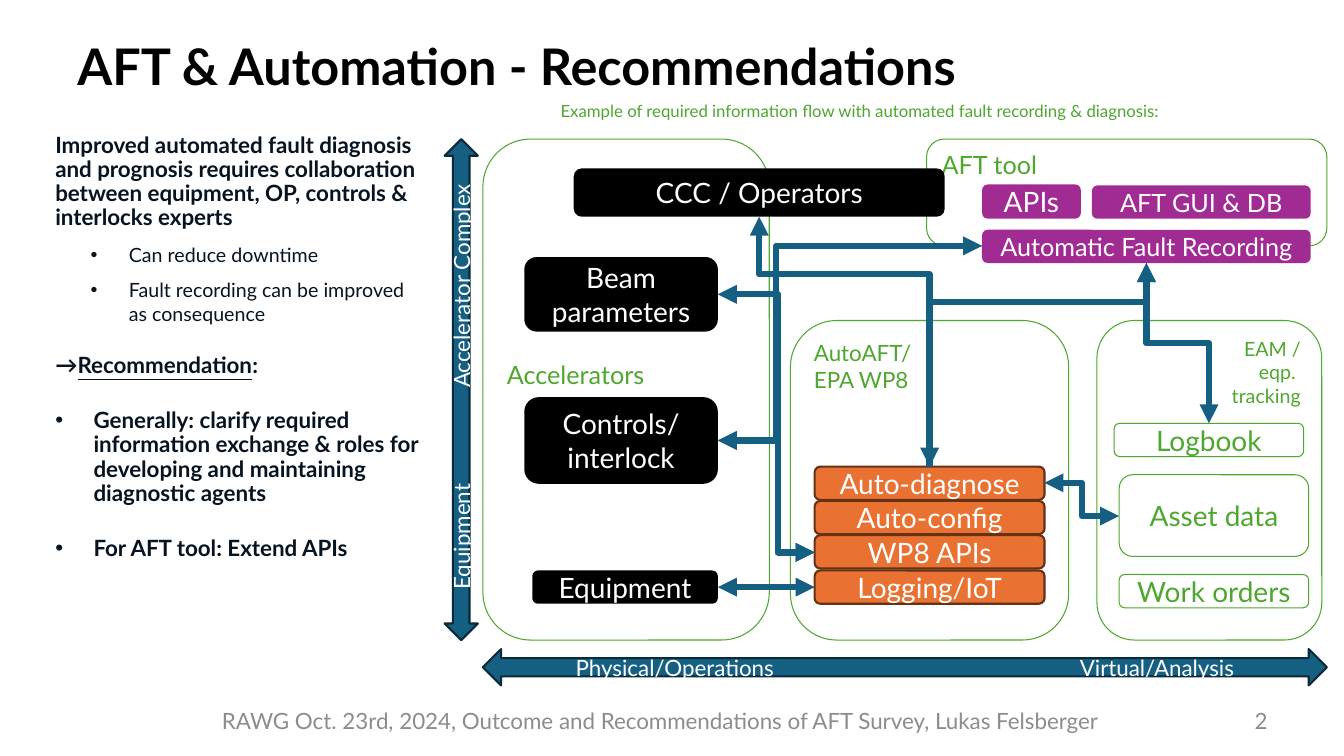
from lxml.etree import SubElement
from pptx import Presentation
from pptx.dml.color import RGBColor
from pptx.enum.shapes import MSO_CONNECTOR as Connector, MSO_SHAPE as Shape
from pptx.enum.text import MSO_ANCHOR as Anchor, PP_ALIGN as Align
from pptx.oxml.ns import qn
from pptx.util import Pt

WHITE = RGBColor(0xFF, 0xFF, 0xFF)
BLACK = RGBColor(0x00, 0x00, 0x00)
INK = RGBColor(0x07, 0x14, 0x20)
GREY = RGBColor(0x8C, 0x8C, 0x8C)
GREEN = RGBColor(0x4E, 0xA7, 0x2E)
ORANGE = RGBColor(0xE9, 0x71, 0x32)
BROWN = RGBColor(0x66, 0x32, 0x16)
PURPLE = RGBColor(0xA0, 0x2B, 0x93)
TEAL = RGBColor(0x15, 0x60, 0x82)
NAVY = RGBColor(0x09, 0x2A, 0x39)
SCALE = 9144


def px(length):
    return round(length * SCALE)


def assign(target, values):
    for name, value in values.items():
        setattr(target, name, value)


class Diagram:
    """Draws styled elements on one slide, with lengths in hundredths of an inch."""

    font_name = "Lato"

    def __init__(self, slide):
        self.slide = slide
        self.shapes = slide.shapes

    def run(self, paragraph, text, size, color, **values):
        paragraph.add_run().text = text
        font = paragraph.runs[-1].font
        assign(font, {"name": self.font_name, "size": Pt(size), **values})
        font.color.rgb = color

    def fill_text(self, frame, text, size, color, align=Align.LEFT, bold=False, **values):
        assign(frame, {"word_wrap": True, **values})
        frame.text = text
        for paragraph in frame.paragraphs:
            paragraph.alignment = align
            for run in paragraph.runs:
                assign(run.font, {"name": self.font_name, "size": Pt(size), "bold": bold})
                run.font.color.rgb = color

    def text(self, box, text, size, color, **values):
        textbox = self.shapes.add_textbox(*map(px, box))
        self.fill_text(textbox.text_frame, text, size, color, **values)

    def box(self, box, text, size, color, fill=None, line=None, width=0.75,
            kind=Shape.ROUNDED_RECTANGLE, **values):
        shape = self.shapes.add_shape(kind, *map(px, box))
        shape.shadow.inherit = False
        for target, paint in ((shape.fill, fill), (shape.line.fill, line)):
            if paint is None:
                target.background()
            else:
                target.solid()
                target.fore_color.rgb = paint
        if line is not None:
            shape.line.width = Pt(width)
        self.fill_text(shape.text_frame, text, size, color, **values)
        return shape

    def axis(self, box, first, second, indent, tab, rotation=0):
        shape = self.box(box, f"{first}\t{second}", 16, WHITE, TEAL, NAVY, 1.5,
                         Shape.LEFT_RIGHT_ARROW, vertical_anchor=Anchor.MIDDLE,
                         margin_left=px(indent))
        shape.rotation = rotation
        properties = shape.text_frame.paragraphs[0]._p.get_or_add_pPr()
        tabs = SubElement(properties, qn("a:tabLst"))
        SubElement(tabs, qn("a:tab"), pos=str(px(tab)), algn="l")

    def arrow(self, kind, start, end, ends=("headEnd", "tailEnd")):
        connector = self.shapes.add_connector(kind, *map(px, start + end))
        connector.line.width = Pt(4.5)
        connector.line.color.rgb = TEAL
        properties = connector._element.spPr
        for name in ends:
            SubElement(properties.find(qn("a:ln")), qn(f"a:{name}"), type="triangle")
        SubElement(properties, qn("a:effectLst"))
        return connector

    def elbow(self, start, end, bend=0.5, vertical=False, **values):
        connector = self.arrow(Connector.ELBOW, start, end, **values)
        properties = connector._element.spPr
        guides = properties.find(qn("a:prstGeom")).get_or_add_avLst()
        SubElement(guides, qn("a:gd"), name="adj1", fmla=f"val {round(bend * 100000)}")
        if vertical:
            across, down = end[0] - start[0], end[1] - start[1]
            width, height = abs(down), abs(across)
            assign(connector, {"left": px((start[0] + end[0] - width) / 2),
                               "top": px((start[1] + end[1] - height) / 2),
                               "width": px(width), "height": px(height)})
            frame = properties.find(qn("a:xfrm"))
            for name, value in (("rot", 16200000), ("flipH", int(down > 0)),
                                ("flipV", int(across < 0))):
                frame.set(name, str(value))

    def link(self, first, second):
        connector = self.arrow(Connector.STRAIGHT, (712, 583), (808, 583))
        connector.begin_connect(first, 3)
        connector.end_connect(second, 1)

    def paragraph(self, paragraph, runs, size, bold, indent, hanging, bullet, **spacing):
        assign(paragraph, spacing)
        properties = paragraph._p.get_or_add_pPr()
        properties.set("marL", str(px(indent)))
        properties.set("indent", str(-px(hanging)))
        if bullet:
            SubElement(properties, qn("a:buFont"), typeface="Arial")
            SubElement(properties, qn("a:buChar"), char="•")
        for text, underline in runs:
            self.run(paragraph, text, size, INK, bold=bold, underline=underline)

    def body(self, box, items):
        frame = self.shapes.add_textbox(*map(px, box)).text_frame
        frame.word_wrap = True
        main = dict(size=16, bold=True, indent=0, hanging=0, bullet=False,
                    line_spacing=0.9, space_before=Pt(18), space_after=Pt(4))
        point = {**main, "indent": 38, "hanging": 38, "bullet": True}
        detail = {**point, "size": 14, "bold": False, "indent": 73, "level": 1,
                  "line_spacing": 1.0, "space_before": Pt(5), "space_after": Pt(3)}
        styles = {"main": main, "point": point, "detail": detail}
        for index, (style, *runs) in enumerate(items):
            paragraph = frame.add_paragraph() if index else frame.paragraphs[0]
            self.paragraph(paragraph, runs, **styles[style])


def main():
    presentation = Presentation()
    assign(presentation, {"slide_width": px(1333), "slide_height": px(750)})
    diagram = Diagram(presentation.slides.add_slide(presentation.slide_layouts[6]))
    middle = {"vertical_anchor": Anchor.MIDDLE}
    centred = {"align": Align.CENTER, **middle}

    diagram.text((132, 695, 1046, 40), "RAWG Oct. 23rd, 2024, Outcome and Recommendations "
                 "of AFT Survey, Lukas Felsberger", 16, GREY, **centred)
    diagram.text((1194, 695, 73, 40), "2", 16, GREY, align=Align.RIGHT, **middle)

    top = {"vertical_anchor": Anchor.TOP}
    for box, text, size, values in (
        ((919, 138, 397, 106), "AFT tool", 18, top),
        ((479, 138, 284, 497), "Accelerators", 18, {"margin_bottom": px(35), **middle}),
        ((1088, 318, 223, 317), "EAM /\veqp. \vtracking", 14, {"align": Align.RIGHT, **top}),
        ((784, 318, 276, 317), "AutoAFT/\vEPA WP8", 16, top),
    ):
        diagram.box(box, text, size, GREEN, line=GREEN, **values)

    black = {"color": WHITE, "fill": BLACK}
    orange = {"color": WHITE, "fill": ORANGE, "line": BROWN, "width": 1.5}
    purple = {"color": WHITE, "fill": PURPLE}
    green = {"color": GREEN, "line": GREEN}
    nodes = {}
    for box, text, size, style in (
        ((520, 255, 192, 74), "Beam parameters", 20, black),
        ((520, 394, 192, 86), "Controls/ interlock", 20, black),
        ((528, 566, 184, 33), "Equipment", 20, black),
        ((808, 531, 228, 33), "WP8 APIs", 20, orange),
        ((808, 463, 228, 33), "Auto-diagnose", 20, orange),
        ((808, 497, 228, 33), "Auto-config", 20, orange),
        ((1083, 184, 217, 33), "AFT GUI & DB", 18, purple),
        ((974, 228, 326, 33), "Automatic Fault Recording", 18, purple),
        ((974, 183, 98, 34), "APIs", 20, purple),
        ((569, 167, 368, 48), "CCC / Operators", 20, black),
        ((1105, 420, 188, 33), "Logbook", 20, green),
        ((1110, 570, 188, 33), "Work orders", 20, green),
        ((1110, 471, 188, 81), "Asset data", 20, green),
        ((808, 566, 228, 33), "Logging/IoT", 20, orange),
    ):
        nodes[text] = diagram.box(box, text, size, **style, **centred)

    diagram.link(nodes["Equipment"], nodes["Logging/IoT"])
    diagram.elbow((1036, 479), (1110, 512))
    diagram.elbow((922, 463), (1137, 261), 0.81, vertical=True, ends=("tailEnd",))
    diagram.elbow((922, 463), (753, 215), 0.77, vertical=True)
    diagram.axis((479, 644, 837, 36), "Physical/Operations", "Virtual/Analysis", 83, 500)
    diagram.axis((209, 370, 497, 33), "Equipment", "Accelerator Complex", 42, 200, 270)
    diagram.elbow((712, 437), (808, 548), 0.62)
    diagram.elbow((712, 437), (974, 244), 0.22)
    diagram.elbow((1137, 261), (1199, 420), vertical=True)
    diagram.elbow((712, 292), (808, 548), 0.62)

    diagram.text((67, 30, 1089, 125), "AFT & Automation - Recommendations", 36, BLACK, bold=True)
    diagram.body((45, 128, 386, 550), (
        ("main", ("Improved automated fault diagnosis and prognosis requires collaboration "
                  "between equipment, OP, controls & interlocks experts", False)),
        ("detail", ("Can reduce downtime", False)),
        ("detail", ("Fault recording can be improved as consequence", False)),
        ("main", ("→", False), ("Recommendation", True), (":", False)),
        ("point", ("Generally: clarify required information exchange & roles for "
                   "developing and maintaining diagnostic agents", False)),
        ("point", ("For AFT tool: Extend APIs", False)),
    ))
    diagram.text((542, 95, 647, 30), "Example of required information flow with automated "
                 "fault recording & diagnosis:", 12, GREEN, margin_left=px(14))
    presentation.save("out.pptx")


if __name__ == "__main__":
    main()
